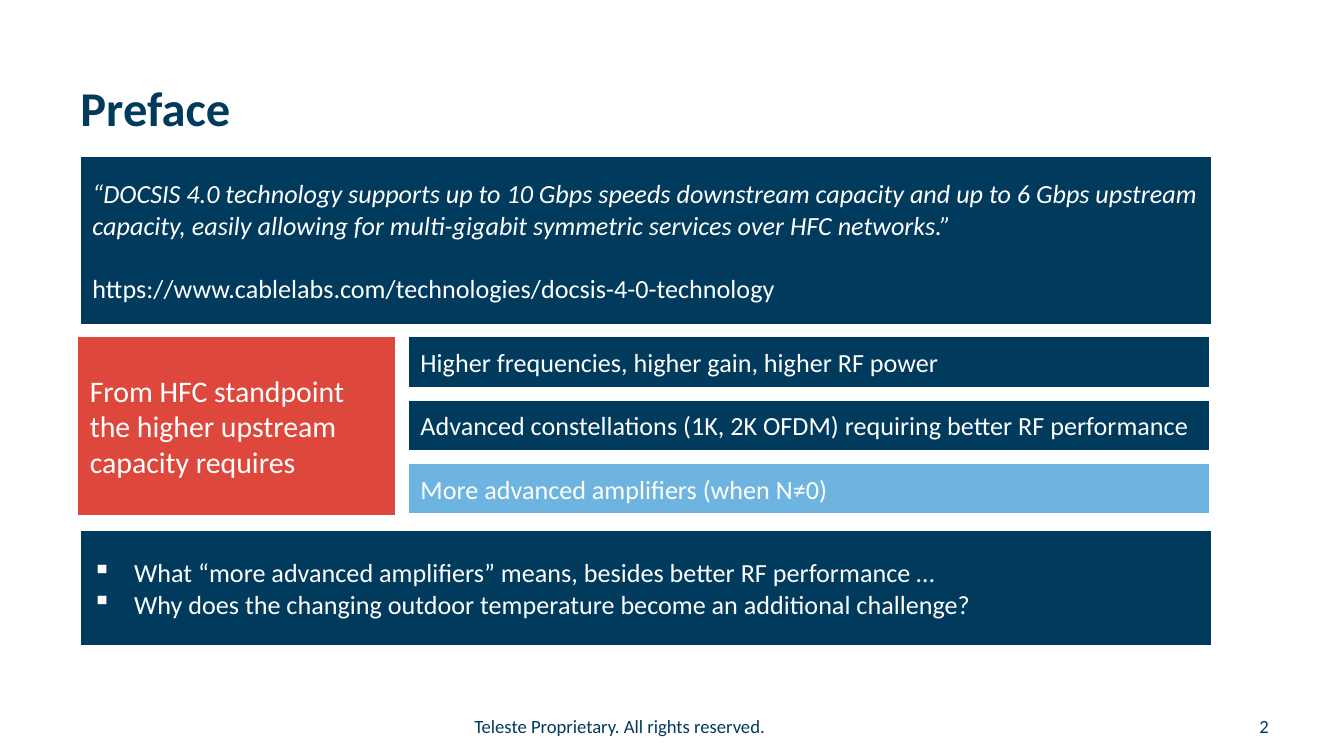
from pptx import Presentation
from pptx import util as u
from pptx.dml.color import RGBColor
from pptx.enum import shapes, text
from pptx.oxml.ns import qn
from lxml import etree

HUES = {"navy": "003A5D", "red": "DE473C", "sky": "6EB4E1", "white": "FFFFFF"}
FONT = "Calibri"
CELL = 0.1


def hue(name):
    return RGBColor.from_string(HUES[name])


class Deck:
    def __init__(self, cols, rows):
        self.show = Presentation()
        self.show.slide_width = self.size(cols)
        self.show.slide_height = self.size(rows)
        self.slide = self.show.slides.add_slide(self.show.slide_layouts[6])

    def size(self, cells):
        return u.Inches(cells * CELL)

    def area(self, *cells):
        return [self.size(c) for c in cells]

    def fill_text(self, shape, lines, points, ink, align, anchor, bold=False):
        frame = shape.text_frame
        frame.word_wrap = True
        frame.vertical_anchor = anchor
        frame.text = "\n".join(lines)
        for para in frame.paragraphs:
            para.alignment = align
            para.font.name = FONT
            para.font.size = u.Pt(points)
            para.font.bold = bold
            para.font.color.rgb = hue(ink)
        return frame.paragraphs

    def label(self, words, area, points, align=text.PP_ALIGN.LEFT, bold=False):
        box = self.slide.shapes.add_textbox(*self.area(*area))
        self.fill_text(box, [words], points, "navy", align,
                       text.MSO_ANCHOR.TOP, bold)

    def panel(self, lines, area, fill="navy", points=14):
        box = self.slide.shapes.add_shape(
            shapes.MSO_SHAPE.RECTANGLE, *self.area(*area))
        box.shadow.inherit = False
        box.fill.solid()
        box.fill.fore_color.rgb = hue(fill)
        box.line.color.rgb = hue("white")
        box.line.width = u.Pt(1.5)
        return self.fill_text(box, lines, points, "white",
                              text.PP_ALIGN.LEFT, text.MSO_ANCHOR.MIDDLE)

    def bullets(self, lines, area):
        for para in self.panel(lines, area):
            props = para._p.get_or_add_pPr()
            dent = self.size(3.1)
            props.set("marL", str(dent))
            props.set("indent", str(-dent))
            mark = etree.Element(qn("a:buChar"), char="▪")
            props.insert(0, mark)

    def save(self):
        self.show.save("out.pptx")


def main():
    deck = Deck(100, 56.25)
    left, wide = 5.9, 84.3

    deck.label("Teleste Proprietary. All rights reserved.",
               (28.6, 52.7, 35, 2.7), 10, text.PP_ALIGN.CENTER)
    deck.label("Preface", (5, 5.3, 91.5, 9.4), 26, bold=True)
    deck.label("2", (91.1, 52.7, 4.3, 2.7), 10, text.PP_ALIGN.RIGHT)

    deck.panel(["From HFC standpoint the higher upstream capacity requires"],
               (5.7, 25, 23.8, 13.4), "red", 16)

    quote, link = deck.panel([
        "“DOCSIS 4.0 technology supports up to 10 Gbps speeds downstream "
        "capacity and up to 6 Gbps upstream capacity, easily allowing for "
        "multi-gigabit symmetric services over HFC networks.”",
        "https://www.cablelabs.com/technologies/docsis-4-0-technology",
    ], (left, 11.6, wide, 12.6))
    quote.font.italic = True
    link.space_before = u.Pt(17)

    needs = [
        ("Higher frequencies, higher gain, higher RF power", "navy"),
        ("Advanced constellations (1K, 2K OFDM) requiring better RF performance",
         "navy"),
        ("More advanced amplifiers (when N≠0)", "sky"),
    ]
    for row, (need, fill) in enumerate(needs):
        deck.panel([need], (30.3, 25 + 4.7 * row, 59.8, 3.9), fill)

    deck.bullets([
        "What “more advanced amplifiers” means, besides better RF performance …",
        "Why does the changing outdoor temperature become an additional challenge?",
    ], (left, 39.4, wide, 8.7))

    deck.save()


if __name__ == "__main__":
    main()
